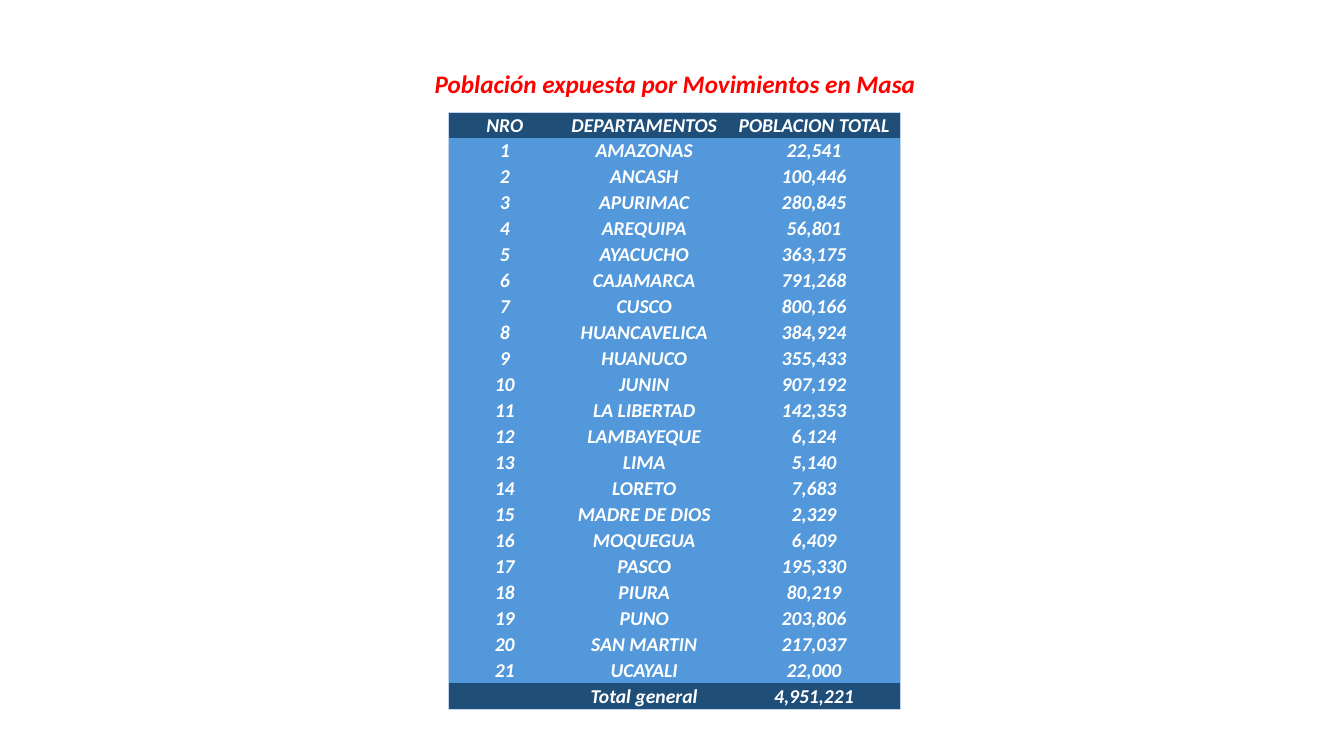
import dataclasses
import typing

import lxml.etree
import pptx
import pptx.dml.color
import pptx.enum.text
import pptx.oxml.ns
import pptx.util

Cm = pptx.util.Cm
FONT = "Calibri"
WHITE, RED, NAVY, BLUE, BORDER = "FFFFFF", "FF0000", "1F4E79", "5398DB", "C4D5EB"
COLUMN_WIDTHS = (2.84, 4.19, 4.37)
TABLE_LEFT, TABLE_TOP, TABLE_HEIGHT = 11.3, 2.82, 15.06
TEXT_SIZE = pptx.util.Pt(14)


@dataclasses.dataclass(frozen=True)
class TableRow:
    number: str
    department: str
    population: str
    fill: str = BLUE


DEPARTMENTS = (
    ("AMAZONAS", 22541), ("ANCASH", 100446), ("APURIMAC", 280845),
    ("AREQUIPA", 56801), ("AYACUCHO", 363175), ("CAJAMARCA", 791268),
    ("CUSCO", 800166), ("HUANCAVELICA", 384924), ("HUANUCO", 355433),
    ("JUNIN", 907192), ("LA LIBERTAD", 142353), ("LAMBAYEQUE", 6124),
    ("LIMA", 5140), ("LORETO", 7683), ("MADRE DE DIOS", 2329),
    ("MOQUEGUA", 6409), ("PASCO", 195330), ("PIURA", 80219),
    ("PUNO", 203806), ("SAN MARTIN", 217037), ("UCAYALI", 22000),
)
ROWS = (
    TableRow("NRO", "DEPARTAMENTOS", "POBLACION TOTAL", NAVY),
    *(TableRow(str(number), name, f"{population:,}")
      for number, (name, population) in enumerate(DEPARTMENTS, 1)),
    TableRow("", "Total general", "4,951,221", NAVY),
)


def rgb(value: str) -> pptx.dml.color.RGBColor:
    return pptx.dml.color.RGBColor.from_string(value)


def set_attributes(target: typing.Any, values: dict[str, typing.Any]) -> None:
    for name, value in values.items():
        setattr(target, name, value)


def write_text(paragraph: typing.Any, text: str, size: int, color: str) -> None:
    paragraph.alignment = pptx.enum.text.PP_ALIGN.CENTER
    run = paragraph.add_run()
    run.text = text
    set_attributes(run.font, {"name": FONT, "size": size, "bold": True, "italic": True})
    run.font.color.rgb = rgb(color)


def set_borders(cell: typing.Any, visible: dict[str, bool]) -> None:
    """Draw the visible sides and clear the others."""
    properties = cell._tc.get_or_add_tcPr()
    qualified = pptx.oxml.ns.qn
    for side, shown in visible.items():
        line = lxml.etree.SubElement(properties, qualified(f"a:ln{side}"), w="6350")
        fill = lxml.etree.SubElement(line, qualified("a:solidFill" if shown else "a:noFill"))
        if shown:
            lxml.etree.SubElement(fill, qualified("a:srgbClr"), val=BORDER)


def add_title(slide: typing.Any) -> None:
    title = slide.shapes.title
    set_attributes(title, {"left": Cm(10.62), "top": Cm(1.6),
                           "width": Cm(12.78), "height": Cm(1.02)})
    set_attributes(title.text_frame, {
        "word_wrap": False,
        "auto_size": pptx.enum.text.MSO_AUTO_SIZE.SHAPE_TO_FIT_TEXT,
        "vertical_anchor": pptx.enum.text.MSO_ANCHOR.TOP,
    })
    write_text(title.text_frame.paragraphs[0],
               "Población expuesta por Movimientos en Masa", pptx.util.Pt(18), RED)


def add_population_table(slide: typing.Any) -> None:
    last_row, last_column = len(ROWS) - 1, len(COLUMN_WIDTHS) - 1
    table = slide.shapes.add_table(
        len(ROWS), len(COLUMN_WIDTHS), Cm(TABLE_LEFT), Cm(TABLE_TOP),
        Cm(sum(COLUMN_WIDTHS)), Cm(TABLE_HEIGHT)).table
    set_attributes(table, {"first_row": False, "horz_banding": False})
    for column, width in zip(table.columns, COLUMN_WIDTHS):
        column.width = Cm(width)

    for row_index, row in enumerate(ROWS):
        for column_index, text in enumerate((row.number, row.department, row.population)):
            cell = table.cell(row_index, column_index)
            set_attributes(cell, {
                "margin_left": Cm(0.02), "margin_right": Cm(0.02),
                "margin_top": Cm(0.02), "margin_bottom": 0,
                "vertical_anchor": pptx.enum.text.MSO_ANCHOR.MIDDLE,
            })
            set_borders(cell, {"L": column_index == 0, "R": column_index == last_column,
                               "T": row_index == 0, "B": row_index == last_row})
            cell.fill.solid()
            cell.fill.fore_color.rgb = rgb(row.fill)
            paragraph = cell.text_frame.paragraphs[0]
            if text:
                write_text(paragraph, text, TEXT_SIZE, WHITE)
            else:
                # Keep the blank cell from stretching its row
                lxml.etree.SubElement(paragraph._p, pptx.oxml.ns.qn("a:endParaRPr"), sz="1400")


def main() -> None:
    presentation = pptx.Presentation()
    set_attributes(presentation, {"slide_width": Cm(33.87), "slide_height": Cm(19.05)})
    slide = presentation.slides.add_slide(presentation.slide_layouts.get_by_name("Title Only"))
    add_title(slide)
    add_population_table(slide)
    presentation.save("out.pptx")


if __name__ == "__main__":
    main()
